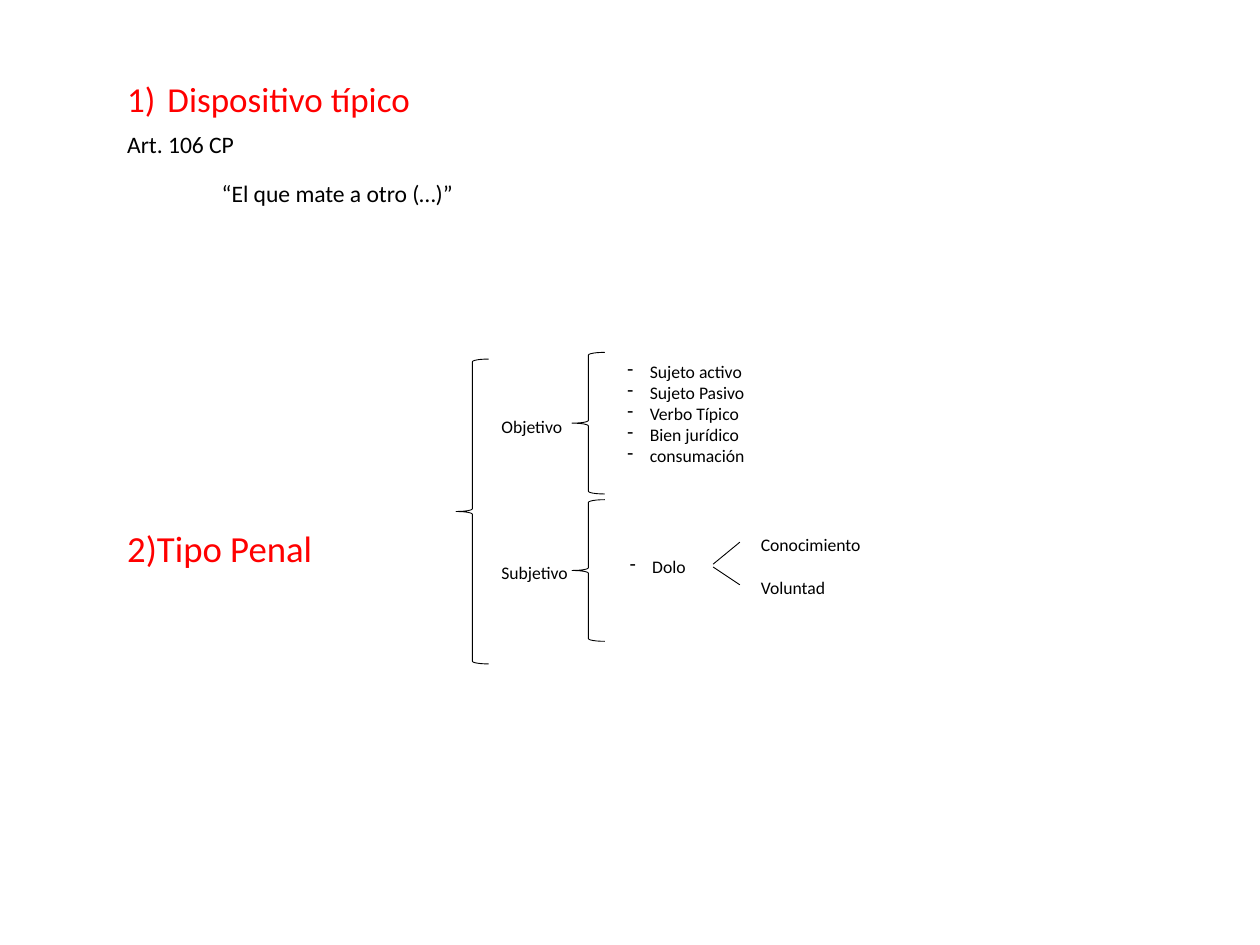
"""Build the slide on the penal provision and the penal type."""
from lxml import etree
from pptx import Presentation
from pptx.dml.color import RGBColor
from pptx.enum import shapes, text
from pptx.oxml import ns
from pptx.util import Pt

RED = RGBColor(255, 0, 0)
BLACK = RGBColor(0, 0, 0)


class Deck:
    """Hold the style and the current slide."""

    face = "Calibri"
    small = 10.1
    thin = 0.5

    def __init__(self):
        self.prs = Presentation()
        self.prs.slide_width, self.prs.slide_height = Pt(720), Pt(540)
        self.slide = self.prs.slides.add_slide(self.prs.slide_layouts[1])
        title = self.slide.shapes.title.element
        title.getparent().remove(title)

    def fill(self, para, words, size, color=BLACK, mark="buNone", left=0, hang=0, **attrs):
        """Fill one paragraph with its bullet, indent and font."""
        para.text = words
        props = para._p.get_or_add_pPr()
        props.set("marL", str(Pt(left)))
        props.set("indent", str(Pt(-hang)))
        etree.SubElement(props, ns.qn("a:" + mark), **attrs)
        para.alignment = text.PP_ALIGN.LEFT
        font = para.font
        font.name, font.size, font.color.rgb = self.face, Pt(size), color

    def body(self, x, y, w, h, rows):
        """Place the body placeholder and its spaced paragraphs."""
        box = self.slide.placeholders[1]
        box.left, box.top, box.width, box.height = map(Pt, (x, y, w, h))
        frame = box.text_frame
        frame.auto_size = text.MSO_AUTO_SIZE.NONE
        for i, (gap, row) in enumerate(rows):
            para = frame.add_paragraph() if i else frame.paragraphs[0]
            self.fill(para, **row)
            para.line_spacing, para.space_before = 0.9, Pt(gap)

    def label(self, x, y, w, *lines, dash=False):
        """Add a small text box, with dashes if it is a list."""
        box = self.slide.shapes.add_textbox(Pt(x), Pt(y), Pt(w), Pt(7.2 + 12.3 * len(lines)))
        frame = box.text_frame
        frame.word_wrap = True
        style = dict(mark="buChar", char="-", left=12.8, hang=12.8) if dash else {}
        for i, line in enumerate(lines):
            para = frame.add_paragraph() if i else frame.paragraphs[0]
            self.fill(para, line, self.small, **style)

    def brace(self, x, y, h):
        """Add a left brace."""
        item = self.slide.shapes.add_shape(
            shapes.MSO_SHAPE.LEFT_BRACE, Pt(x), Pt(y), Pt(18.7), Pt(h))
        item.shadow.inherit = False
        item.fill.background()
        self.ink(item)

    def line(self, *ends):
        """Add a straight line."""
        item = self.slide.shapes.add_connector(shapes.MSO_CONNECTOR.STRAIGHT, *map(Pt, ends))
        etree.SubElement(item._element.spPr, ns.qn("a:effectLst"))
        self.ink(item)

    def ink(self, item):
        """Give an outline its colour and width."""
        item.line.color.rgb, item.line.width = BLACK, Pt(self.thin)


def main():
    """Draw the slide and save it."""
    deck = Deck()
    deck.body(65.5, 43.2, 607, 425.5, [
        (7.5, dict(words="Dispositivo típico", size=20, color=RED, left=23, hang=23,
                   mark="buAutoNum", type="arabicParenR")),
        (7.5, dict(words="Art. 106 CP", size=13.5)),
        (13.7, dict(words="“El que mate a otro (…)”", size=13.5, left=54)),
        (184.7, dict(words="2)Tipo Penal", size=21, color=RED)),
    ])
    deck.brace(260.6, 205.2, 174.2)
    for name, top, y in (("Objetivo", 201.4, 234), ("Subjetivo", 285.6, 317.8)):
        deck.brace(326.9, top, 80.9)
        deck.label(279.4, y, 56.9, name)
    deck.label(351.4, 202.5, 92.9, "Sujeto activo", "Sujeto Pasivo", "Verbo Típico",
               "Bien jurídico", "consumación", dash=True)
    deck.label(352.8, 313.9, 92.9, "Dolo", dash=True)
    for name, y, start, end in (("Conocimiento", 301.7, 322.4, 309.8),
                                ("Voluntad", 326.2, 324, 334.2)):
        deck.line(407.5, start, 422.8, end)
        deck.label(427.7, y, 84.2, name)
    deck.prs.save("out.pptx")


if __name__ == "__main__":
    main()
